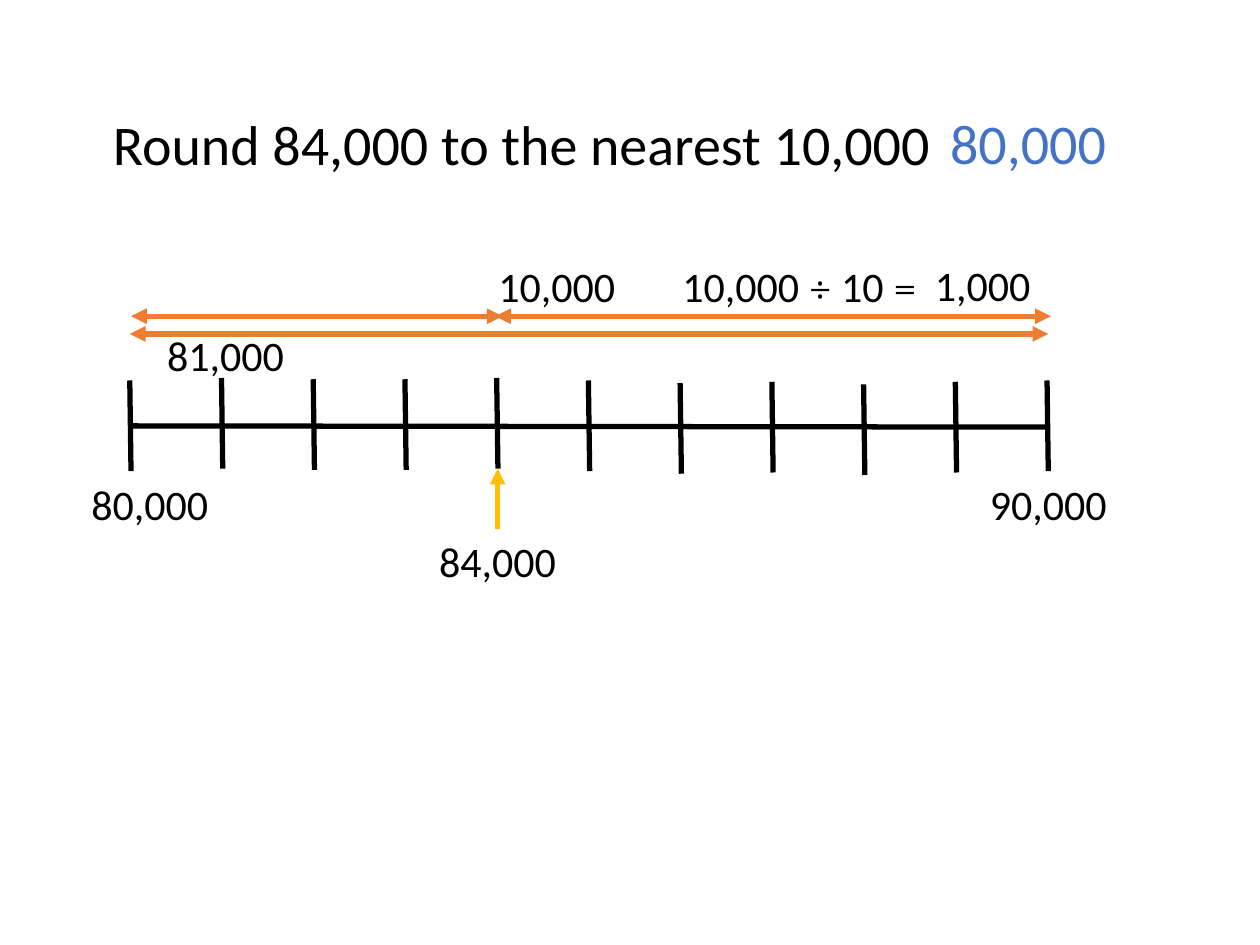
from dataclasses import dataclass

from lxml import etree
from pptx import Presentation
from pptx.dml.color import RGBColor
from pptx.enum.shapes import MSO_CONNECTOR
from pptx.enum.text import MSO_ANCHOR, MSO_AUTO_SIZE, PP_ALIGN
from pptx.oxml.ns import qn
from pptx.util import Inches, Pt

STRAIGHT = MSO_CONNECTOR.STRAIGHT
CENTER = PP_ALIGN.CENTER
TOP = MSO_ANCHOR.TOP
NO_AUTOFIT = MSO_AUTO_SIZE.NONE


@dataclass(frozen=True)
class Theme:
    ink: str = "000000"
    answer: str = "4472C4"
    span: str = "ED7D31"
    pointer: str = "FFC000"
    font: str = "Calibri"
    symbol_font: str = "Cambria"
    title_size: int = 32
    label_size: int = 24
    line_width: int = 3


class NumberLineSlide:
    def __init__(self, presentation, theme):
        self.theme = theme
        self.slide = presentation.slides.add_slide(presentation.slide_layouts[5])

    def fill_text(self, shape, runs, size, color):
        frame = shape.text_frame
        frame.word_wrap = True
        frame.auto_size = NO_AUTOFIT
        frame.vertical_anchor = TOP
        paragraph = frame.paragraphs[0]
        paragraph.alignment = CENTER
        for text, font in runs:
            run = paragraph.add_run()
            run.text = text
            run.font.name = font
            run.font.size = Pt(size)
            run.font.color.rgb = RGBColor.from_string(color)

    def title(self, text, left, top, width, height):
        shape = self.slide.shapes.title
        shape.left, shape.top = Inches(left), Inches(top)
        shape.width, shape.height = Inches(width), Inches(height)
        self.fill_text(shape, [(text, self.theme.font)], self.theme.title_size, self.theme.ink)

    def label(self, runs, left, top, width, height=0.5, size=None, color=None):
        shape = self.slide.shapes.add_textbox(
            Inches(left), Inches(top), Inches(width), Inches(height)
        )
        if isinstance(runs, str):
            runs = [(runs, self.theme.font)]
        self.fill_text(shape, runs, size or self.theme.label_size, color or self.theme.ink)

    def line(self, start, end, color, arrowheads=()):
        connector = self.slide.shapes.add_connector(
            STRAIGHT, *(Inches(value) for value in (*start, *end))
        )
        connector.line.color.rgb = RGBColor.from_string(color)
        connector.line.width = Pt(self.theme.line_width)
        properties = connector._element.spPr
        outline = properties.find(qn("a:ln"))
        for arrowhead in arrowheads:
            etree.SubElement(outline, qn(f"a:{arrowhead}"), type="triangle")
        etree.SubElement(properties, qn("a:effectLst"))


def main():
    presentation = Presentation()
    presentation.slide_width = Inches(10)
    presentation.slide_height = Inches(7.5)
    theme = Theme()
    page = NumberLineSlide(presentation, theme)

    page.title("Round 84,000 to the nearest 10,000", 0.73, 0.82, 6.82, 0.64)
    page.label("80,000", 6.82, 0.81, 2.68, 0.64, theme.title_size, theme.answer)

    page.line((1.04, 3.38), (8.32, 3.39), theme.ink)
    tick_tops = (3.02, 3.0, 3.01, 3.01, 3.0, 3.02, 3.04, 3.03, 3.05, 3.03, 3.02)
    first_tick, last_tick, tick_height = 1.03, 8.31, 0.72
    tick_gap = (last_tick - first_tick) / (len(tick_tops) - 1)
    for index, top in enumerate(tick_tops):
        x = first_tick + index * tick_gap
        page.line((x, top), (x + 0.01, top + tick_height), theme.ink)

    for start, end, y in ((1.03, 8.32, 2.65), (1.04, 3.99, 2.51), (3.93, 8.34, 2.51)):
        page.line((start, y), (end, y), theme.span, ("headEnd", "tailEnd"))
    page.line((3.95, 4.2), (3.95, 3.72), theme.pointer, ("tailEnd",))

    division = [
        ("10,000 ", theme.font),
        ("÷ ", theme.symbol_font),
        ("10 ", theme.font),
        ("=", theme.symbol_font),
    ]
    for runs, left, top, width in (
        ("80,000", -0.15, 3.75, 2.68),
        ("90,000", 6.98, 3.75, 2.68),
        ("84,000", 2.61, 4.2, 2.68),
        ("10,000", 3.08, 2.02, 2.68),
        (division, 5.11, 2.02, 2.47),
        ("1,000", 7.1, 2.01, 1.4),
        ("81,000", 1.09, 2.57, 1.4),
    ):
        page.label(runs, left, top, width)

    presentation.save("out.pptx")


if __name__ == "__main__":
    main()
